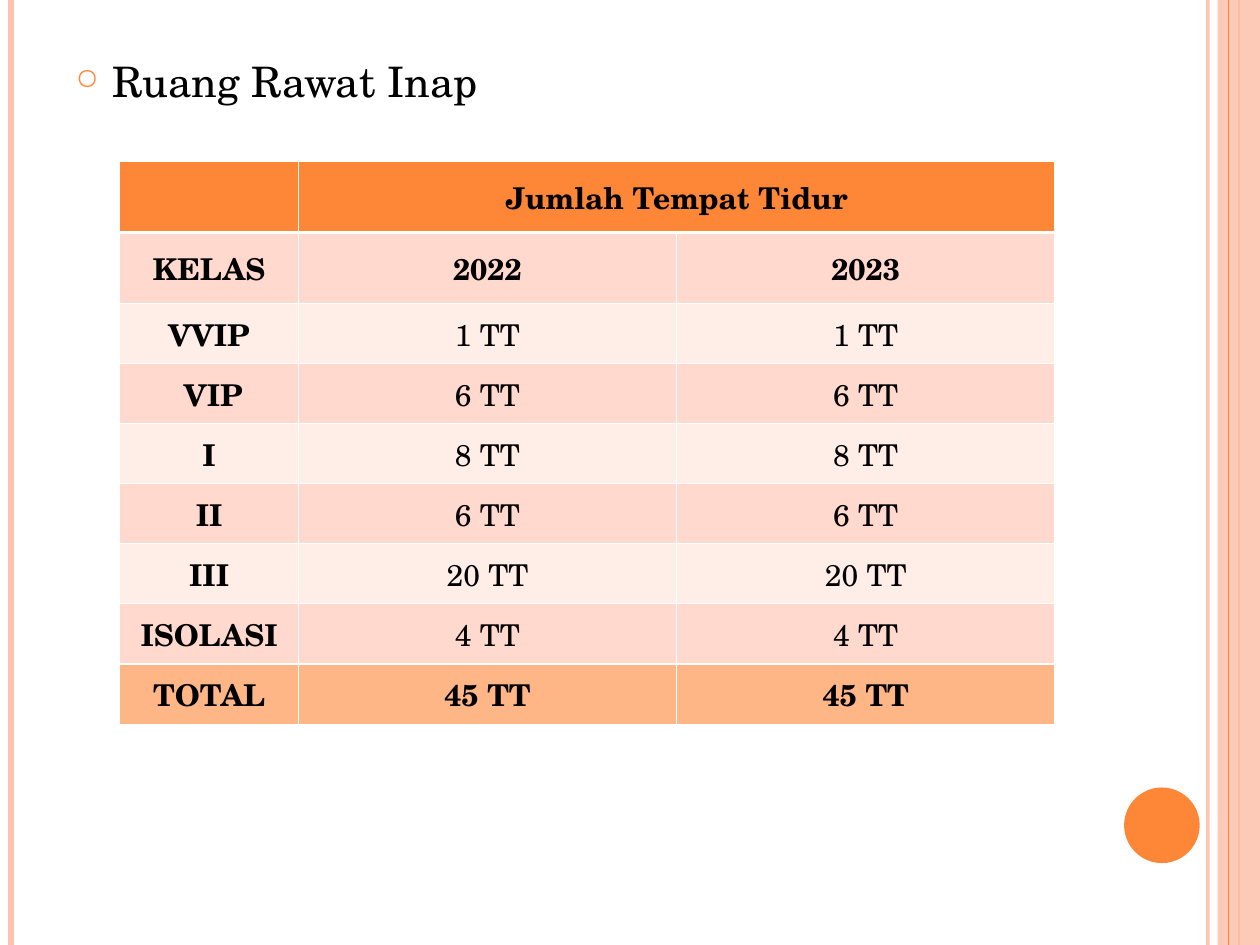
from lxml.etree import SubElement
from pptx import Presentation
from pptx.dml.color import RGBColor
from pptx.enum.shapes import MSO_CONNECTOR as Connector, MSO_SHAPE as Shape
from pptx.enum.text import MSO_ANCHOR as Anchor, MSO_AUTO_SIZE as AutoSize, PP_ALIGN as Align
from pptx.oxml.ns import qn
from pptx.util import Pt

FONT = "TeX Gyre Schola"
ORANGE, PEACH, WHITE, BLACK = "FE8637", "FEC3AE", "FFFFFF", "000000"


def paint(fill, color, opacity=100):
    fill.solid()
    fill.fore_color.rgb = RGBColor.from_string(color)
    if opacity < 100:
        color_node = next(fill._xPr.iter(qn("a:srgbClr")))
        SubElement(color_node, qn("a:alpha"), val=str(opacity * 1000))


def add_text(para, text, size, bold=False):
    span = para.add_run()
    span.text = text
    span.font.name = FONT
    span.font.size = Pt(size)
    span.font.bold = bold
    paint(span.font.fill, BLACK)


deck = Presentation()
deck.slide_width, deck.slide_height = Pt(1008), Pt(756)
page = deck.slides.add_slide(deck.slide_layouts[5])
paint(page.background.fill, WHITE)

bars = [
    ("line", 966.24, 3, PEACH, 93),
    ("line", 8.64, 4.5, PEACH, 100),
    ("line", 991.44, 1.5, ORANGE, 100),
    ("band", 974.16, 33.84, PEACH, 87),
    ("line", 982.8, 0.75, ORANGE, 100),
]
for kind, left, width, color, opacity in bars:
    if kind == "band":
        band = page.shapes.add_shape(Shape.RECTANGLE, Pt(left), 0, Pt(width), Pt(756))
        band.shadow.inherit = False
        band.line.fill.background()
        paint(band.fill, color, opacity)
    else:
        rule = page.shapes.add_connector(Connector.STRAIGHT, Pt(left), 0, Pt(left), Pt(756))
        rule.line.width = Pt(width)
        paint(rule.line.fill, color, opacity)
        SubElement(rule._element.spPr, qn("a:effectLst"))

disc = page.shapes.add_shape(Shape.OVAL, Pt(899.28), Pt(630), Pt(60.48), Pt(60.48))
disc.shadow.inherit = False
disc.line.fill.background()
paint(disc.fill, ORANGE)

title = page.shapes.title
title.left, title.top, title.width, title.height = Pt(50.4), Pt(39.6), Pt(823), Pt(62.64)
frame = title.text_frame
frame.word_wrap = True
frame.auto_size = AutoSize.NONE
frame.vertical_anchor = Anchor.TOP
frame.margin_left = frame.margin_right = Pt(10)
frame.margin_top = frame.margin_bottom = Pt(5)
para = frame.paragraphs[0]
para.alignment = Align.LEFT
para.space_before = Pt(8.4)
add_text(para, "Ruang Rawat Inap", 33.6)
props = para._p.get_or_add_pPr()
props.set("marL", str(Pt(30)))
props.set("indent", str(Pt(-30)))
bullet_color = SubElement(props, qn("a:buClr"))
SubElement(bullet_color, qn("a:srgbClr"), val=ORANGE)
SubElement(props, qn("a:buSzPct"), val="70000")
SubElement(props, qn("a:buChar"), char="○")

rows = [
    ("", "Jumlah Tempat Tidur", ""),
    ("KELAS", "2022", "2023"),
    ("VVIP", "1 TT", "1 TT"),
    (" VIP", "6 TT", "6 TT"),
    ("I", "8 TT", "8 TT"),
    ("II", "6 TT", "6 TT"),
    ("III", "20 TT", "20 TT"),
    ("ISOLASI", "4 TT", "4 TT"),
    ("TOTAL", "45 TT", "45 TT"),
]
last = len(rows) - 1
widths = [142.8, 302.6, 302.6]
heights = [57] * 2 + [48.1] * 7
table = page.shapes.add_table(
    len(rows), len(widths), Pt(95.9), Pt(128.8), Pt(sum(widths)), Pt(sum(heights))
).table
for column, width in zip(table.columns, widths):
    column.width = Pt(width)
for row, height in zip(table.rows, heights):
    row.height = Pt(height)
table.cell(0, 1).merge(table.cell(0, 2))

for i, texts in enumerate(rows):
    if i in (0, last):
        color = ORANGE if i == 0 else "FEB687"
    else:
        color = "FFD9CE" if i % 2 else "FFEDE8"
    for j, text in enumerate(texts):
        cell = table.cell(i, j)
        cell.vertical_anchor = Anchor.MIDDLE
        cell.margin_left = cell.margin_right = cell.margin_top = Pt(0.75)
        cell.margin_bottom = 0
        for side in ("L", "R", "T", "B"):
            thick = (i, side) in ((0, "B"), (1, "T"))
            border = SubElement(
                cell._tc.get_or_add_tcPr(), qn(f"a:ln{side}"), w=str(Pt(3 if thick else 1))
            )
            border_fill = SubElement(border, qn("a:solidFill"))
            SubElement(border_fill, qn("a:srgbClr"), val=WHITE)
        paint(cell.fill, color)
        if text:
            para = cell.text_frame.paragraphs[0]
            para.alignment = Align.CENTER
            add_text(para, text, 24, bold=j == 0 or i in (0, 1, last))

deck.save("out.pptx")
